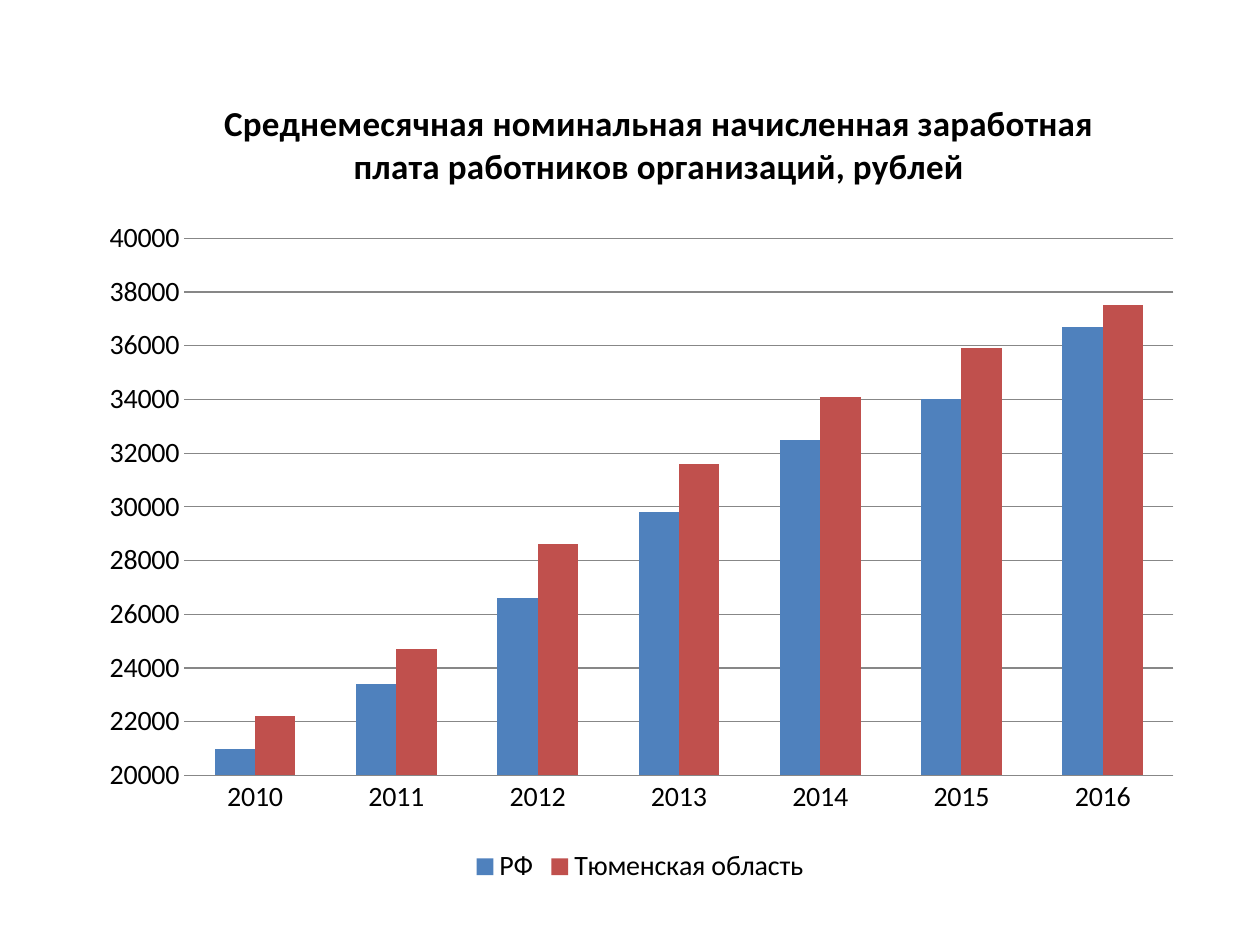
"""Build a slide with a clustered column chart of average monthly wages."""
from pptx import Presentation
from pptx.chart.data import CategoryChartData
from pptx.dml.color import RGBColor
from pptx.enum.chart import XL_CHART_TYPE, XL_LEGEND_POSITION, XL_TICK_MARK
from pptx.oxml import parse_xml
from pptx.oxml.ns import nsdecls, qn
from pptx.util import Inches, Pt

COLUMNS = XL_CHART_TYPE.COLUMN_CLUSTERED
BOTTOM = XL_LEGEND_POSITION.BOTTOM
NO_TICKS = XL_TICK_MARK.NONE
TITLE = "Среднемесячная номинальная начисленная заработная плата работников организаций, рублей"
YEARS = [str(year) for year in range(2010, 2017)]
WAGES = {
    "РФ": ("4F81BD", [21000, 23400, 26600, 29800, 32500, 34000, 36700]),
    "Тюменская область": ("C0504D", [22200, 24700, 28600, 31600, 34100, 35900, 37500]),
}


def style_font(font, size, bold=False, color="000000"):
    font.name = "Calibri"
    font.size = Pt(size)
    font.bold = bold
    font.color.rgb = RGBColor.from_string(color)


def place(element, index, target="", **shares):
    for old in element.findall(qn("c:layout")):
        element.remove(old)
    modes = "".join(f'<c:{axis}Mode val="edge"/>' for axis in "xy")
    values = "".join(f'<c:{key} val="{share}"/>' for key, share in shares.items())
    element.insert(index, parse_xml(
        f'<c:layout {nsdecls("c")}><c:manualLayout>{target}{modes}{values}'
        "</c:manualLayout></c:layout>"))


deck = Presentation()
deck.slide_width, deck.slide_height = Inches(10), Inches(7.5)
page = deck.slides.add_slide(deck.slide_layouts[6])

data = CategoryChartData()
data.categories = YEARS
for name, (color, values) in WAGES.items():
    data.add_series(name, values)

chart = page.shapes.add_chart(
    COLUMNS, Inches(0.67), Inches(0.6), Inches(8.82), Inches(6.46), data).chart
style_font(chart.font, 10)

chart.has_title = True
heading = chart.chart_title
heading.include_in_layout = False
para = heading.text_frame.paragraphs[0]
span = para.add_run()
span.text = TITLE
style_font(span.font, 20, bold=True)
place(heading.element, 1, x=0.12, y=0.02)

chart.has_legend = True
chart.legend.position = BOTTOM
chart.legend.include_in_layout = False
style_font(chart.legend.font, 16)

for axis in (chart.category_axis, chart.value_axis):
    axis.major_tick_mark = axis.minor_tick_mark = NO_TICKS
    style_font(axis.tick_labels.font, 16)
chart.category_axis.format.line.color.rgb = RGBColor.from_string("878787")

scale = chart.value_axis
scale.minimum_scale, scale.maximum_scale, scale.major_unit = 20000, 40000, 2000
scale.format.line.fill.background()
scale.has_major_gridlines = True
grid = scale.major_gridlines.format.line
grid.color.rgb = RGBColor.from_string("878787")
grid.width = Pt(0.75)

plot = chart.plots[0]
plot.gap_width, plot.overlap = 150, 0
plot.vary_by_categories = False
for series, (color, values) in zip(plot.series, WAGES.values()):
    series.format.fill.solid()
    series.format.fill.fore_color.rgb = RGBColor.from_string(color)

plot_area = chart.element.find(f'{qn("c:chart")}/{qn("c:plotArea")}')
place(plot_area, 0, '<c:layoutTarget val="inner"/>', x=0.09, y=0.2, w=0.89, h=0.66)

deck.save("out.pptx")
